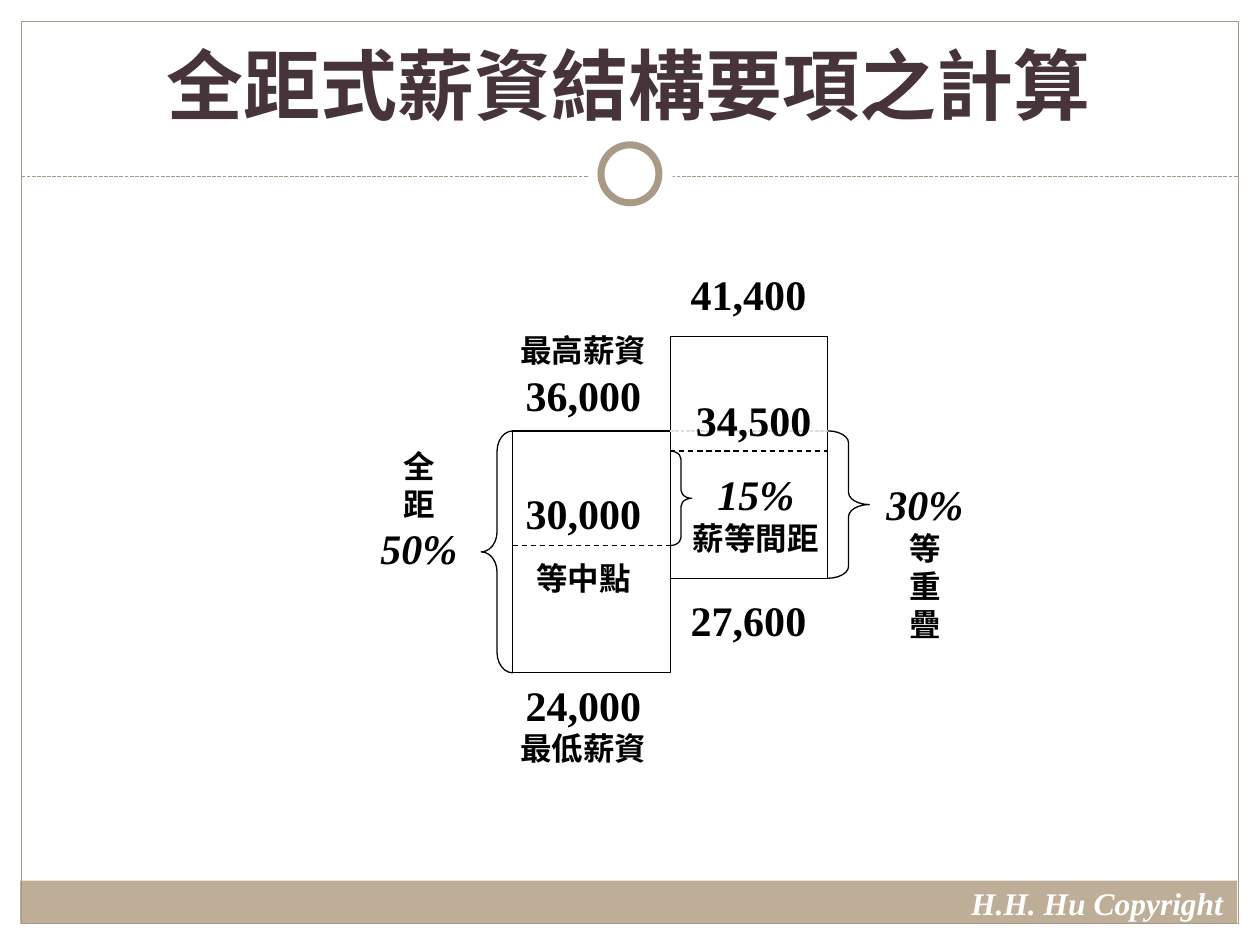
from lxml import etree
from pptx import Presentation
from pptx.dml.color import RGBColor
from pptx.enum.dml import MSO_LINE
from pptx.enum.shapes import MSO_CONNECTOR, MSO_SHAPE
from pptx.enum.text import MSO_ANCHOR, MSO_AUTO_SIZE, PP_ALIGN
from pptx.oxml.ns import qn
from pptx.util import Inches, Pt

BLACK = RGBColor(0x00, 0x00, 0x00)
WHITE = RGBColor(0xFF, 0xFF, 0xFF)
TAUPE = RGBColor(0xA8, 0x9A, 0x86)
SAND = RGBColor(0xBE, 0xAE, 0x98)
PLUM = RGBColor(0x46, 0x34, 0x3A)
PALE_GREY = RGBColor(0xDD, 0xDD, 0xDD)

RECTANGLE, OVAL = MSO_SHAPE.RECTANGLE, MSO_SHAPE.OVAL
LEFT_BRACE, RIGHT_BRACE = MSO_SHAPE.LEFT_BRACE, MSO_SHAPE.RIGHT_BRACE
STRAIGHT = MSO_CONNECTOR.STRAIGHT
DASH, FINE_DASH, DOT = MSO_LINE.DASH, MSO_LINE.SQUARE_DOT, MSO_LINE.SQUARE_DOT
LEFT, CENTER = PP_ALIGN.LEFT, PP_ALIGN.CENTER
BOTTOM, TOP = MSO_ANCHOR.BOTTOM, MSO_ANCHOR.TOP
GROW, FIXED = MSO_AUTO_SIZE.SHAPE_TO_FIT_TEXT, MSO_AUTO_SIZE.NONE

FIGURE, LABEL = 24, 18  # text sizes of amounts and of wording


class SlideBuilder:
    font = "Times New Roman"
    line_width = 0.75

    def __init__(self, slide):
        self.slide = slide

    def shape(self, kind, left, top, width, height, fill=None, line=None,
              weight=line_width, adjust=None):
        shape = self.slide.shapes.add_shape(
            kind, Inches(left), Inches(top), Inches(width), Inches(height))
        shape.shadow.inherit = False
        if fill is None:
            shape.fill.background()
        else:
            shape.fill.solid()
            shape.fill.fore_color.rgb = fill
        if line is None:
            shape.line.fill.background()
        else:
            shape.line.color.rgb = line
            shape.line.width = Pt(weight)
        if adjust is not None:
            shape.adjustments[0] = adjust

    def rule(self, left, right, y, color, dash):
        rule = self.slide.shapes.add_connector(
            STRAIGHT, Inches(left), Inches(y), Inches(right), Inches(y))
        rule.line.color.rgb = color
        rule.line.width = Pt(self.line_width)
        rule.line.dash_style = dash
        etree.SubElement(rule._element.spPr, qn("a:effectLst"))

    def text(self, left, top, width, height, lines, color=BLACK, align=CENTER,
             wrap=False, anchor=TOP, spacing=None, gap=0):
        """Each line is (wording, size) or (wording, size, italic)."""
        box = self.slide.shapes.add_textbox(
            Inches(left), Inches(top), Inches(width), Inches(height))
        frame = box.text_frame
        frame.word_wrap = wrap
        frame.auto_size = FIXED if wrap else GROW
        frame.vertical_anchor = anchor
        for index, (wording, size, *italic) in enumerate(lines):
            paragraph = frame.add_paragraph() if index else frame.paragraphs[0]
            paragraph.alignment = align
            if spacing:
                paragraph.line_spacing = spacing
            if index and gap:
                paragraph.space_before = Pt(gap)
            run = paragraph.add_run()
            run.text = wording
            run.font.name = self.font
            run.font.size = Pt(size)
            run.font.bold = True
            run.font.italic = bool(italic and italic[0])
            run.font.color.rgb = color


def draw_frame(page):
    # Footer band, border and divider with its ring
    page.shape(RECTANGLE, 0.16, 6.99, 9.66, 0.34, fill=SAND)
    page.shape(RECTANGLE, 0.17, 0.17, 9.66, 7.16, line=TAUPE)
    page.rule(0.17, 9.83, 1.4, TAUPE, FINE_DASH)
    page.shape(OVAL, 4.67, 1.05, 0.67, 0.67, fill=WHITE)
    page.shape(OVAL, 4.77, 1.15, 0.46, 0.46, fill=WHITE, line=TAUPE, weight=4)
    page.text(7.61, 6.97, 2.27, 0.4, [("H.H. Hu Copyright", LABEL, True)],
              color=WHITE, align=LEFT)
    # Title
    page.text(0.33, 0.25, 9.33, 0.83, [("全距式薪資結構要項之計算", 44)],
              color=PLUM, wrap=True, anchor=BOTTOM)


def draw_grades(page):
    grade_width, grade_height = 1.25, 1.92
    low_left, low_top, low_mid = 4.07, 3.42, 4.33
    high_left, high_top, high_mid = low_left + grade_width, 2.67, 3.58
    high_right = high_left + grade_width
    high_bottom = high_top + grade_height

    # Two pay grades with their midpoints
    for left, top, middle in ((low_left, low_top, low_mid),
                              (high_left, high_top, high_mid)):
        page.shape(RECTANGLE, left, top, grade_width, grade_height, line=BLACK)
        page.rule(left, left + grade_width, middle, BLACK, DASH)
    page.rule(high_left, high_right, low_top, PALE_GREY, DOT)

    # Braces: range, midpoint distance, overlap
    page.shape(LEFT_BRACE, low_left - 0.25, low_top, 0.25, grade_height,
               line=BLACK, adjust=0.64)
    page.shape(RIGHT_BRACE, high_left, high_mid, 0.17, low_mid - high_mid,
               line=BLACK, adjust=0.38)
    page.shape(RIGHT_BRACE, high_right, low_top, 0.33, high_bottom - low_top,
               line=BLACK, adjust=0.29)

    # Amounts of the lower grade
    page.text(4.03, 2.58, 1.2, 0.8, [("最高薪資", LABEL), ("36,000", FIGURE)])
    page.text(4.07, 3.9, 1.12, 0.9, [("30,000", FIGURE), ("等中點", LABEL)],
              spacing=0.8, gap=16.5)
    page.text(4.03, 5.34, 1.2, 0.8, [("24,000", FIGURE), ("最低薪資", LABEL)])

    # Amounts of the higher grade
    for left, top, amount in ((5.38, 2.08, "41,400"), (5.42, 3.08, "34,500"),
                              (5.38, 4.67, "27,600")):
        page.text(left, top, 1.12, 0.5, [(amount, FIGURE)])

    # Percentages beside the braces
    page.text(2.92, 3.5, 0.81, 1.1,
              [("全", LABEL), ("距", LABEL), ("50%", FIGURE, True)])
    page.text(5.4, 3.67, 1.2, 0.8, [("15%", FIGURE, True), ("薪等間距", LABEL)])
    page.text(6.93, 3.75, 0.82, 1.41,
              [("30%", FIGURE, True)] + [(word, LABEL) for word in "等重疊"])


def main():
    deck = Presentation()
    deck.slide_width, deck.slide_height = Inches(10), Inches(7.5)
    page = SlideBuilder(deck.slides.add_slide(deck.slide_layouts[6]))
    draw_frame(page)
    draw_grades(page)
    deck.save("out.pptx")


if __name__ == "__main__":
    main()
